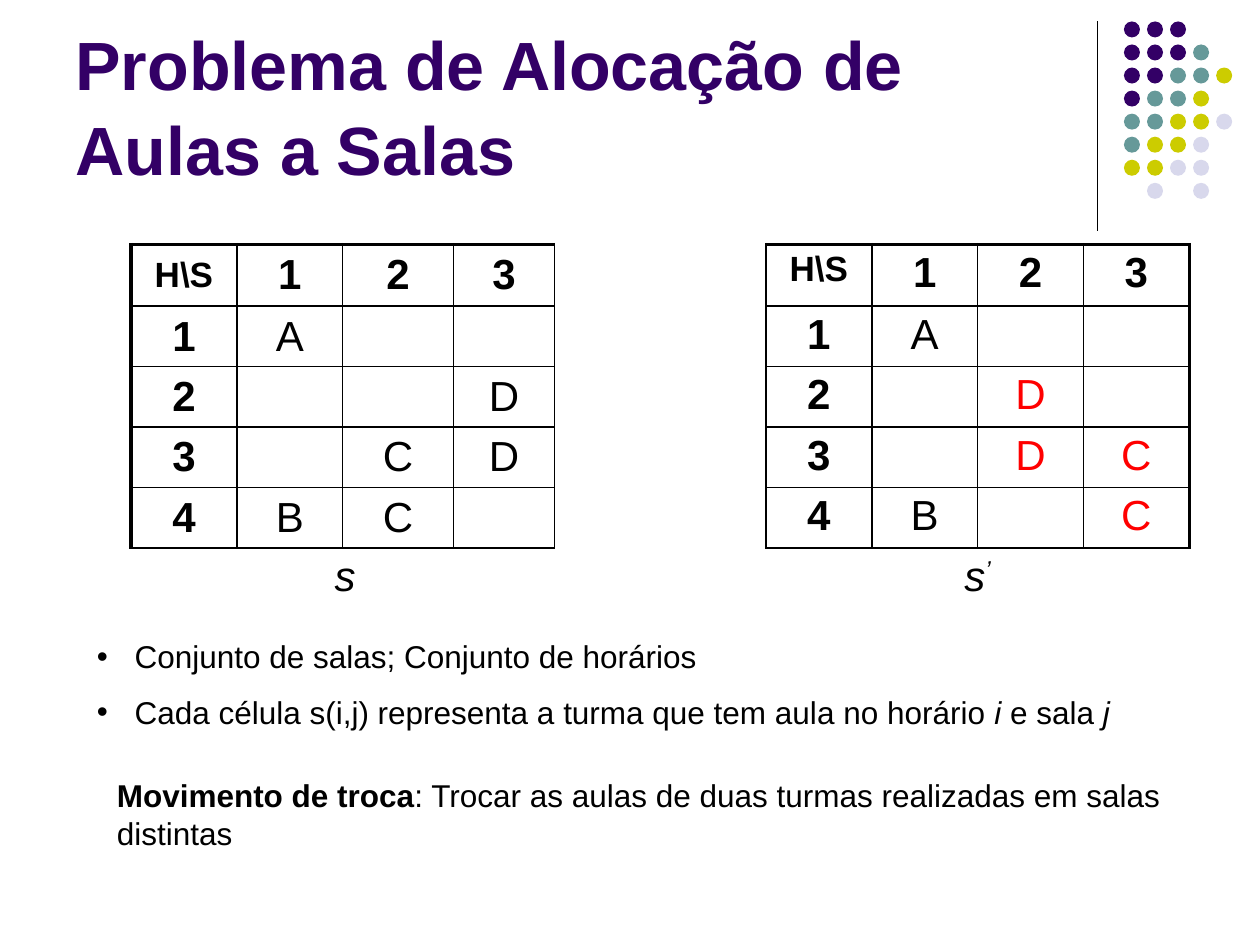
from dataclasses import dataclass
from lxml.etree import SubElement
from pptx import Presentation
from pptx.dml.color import RGBColor
from pptx.enum.shapes import MSO_CONNECTOR, MSO_SHAPE
from pptx.enum.text import MSO_ANCHOR, PP_ALIGN
from pptx.oxml.ns import qn
from pptx.slide import Slide
from pptx.util import Inches, Pt

COLUMNS, ROWS = 100, 75
NO_STYLE = "{2D5ABB26-0587-4C30-8999-92F81FD0307C}"


def color(value):
    return RGBColor.from_string(value)


def units(*lengths):
    return [Inches(length / 10) for length in lengths]


def write(paragraph, text, font="Arial", size=18, ink="000000", bold=False,
          italic=False, raised=0):
    run = paragraph.add_run()
    run.text = text
    run.font.name, run.font.size = font, Pt(size)
    run.font.bold, run.font.italic = bold, italic
    run.font.color.rgb = color(ink)
    if raised:
        run._r.get_or_add_rPr().set("baseline", str(raised * 1000))


@dataclass
class Board:
    slide: Slide
    ink: str = "000000"
    accent: str = "330066"
    moved: str = "FF0000"
    thin: float = 1
    thick: float = 2.25

    def text(self, box, paragraphs, bullet=False, gap=0, anchor=MSO_ANCHOR.TOP,
             spacing=None):
        frame = self.slide.shapes.add_textbox(*units(*box)).text_frame
        frame.word_wrap, frame.vertical_anchor = True, anchor
        for number, runs in enumerate(paragraphs):
            paragraph = frame.add_paragraph() if number else frame.paragraphs[0]
            paragraph.space_before = Pt(gap)
            if spacing:
                paragraph.line_spacing = spacing
            if bullet:
                properties = paragraph._p.get_or_add_pPr()
                indent = Inches(0.3)
                properties.set("marL", str(indent))
                properties.set("indent", str(-indent))
                SubElement(properties, qn("a:buFont"), typeface="Arial")
                SubElement(properties, qn("a:buChar"), char="•")
            for words, style in runs:
                write(paragraph, words, **style)

    def line(self, start, end, width):
        rule = self.slide.shapes.add_connector(
            MSO_CONNECTOR.STRAIGHT, *units(*start, *end))
        rule.line.color.rgb, rule.line.width = color(self.ink), Pt(width)
        SubElement(rule._element.spPr, qn("a:effectLst"))

    def dots(self, left, top, pitch, size, pattern, palette):
        for row, marks in enumerate(pattern):
            for column, mark in enumerate(marks):
                if mark in palette:
                    dot = self.slide.shapes.add_shape(MSO_SHAPE.OVAL, *units(
                        left + column * pitch, top + row * pitch, size, size))
                    dot.shadow.inherit = False
                    dot.fill.solid()
                    dot.fill.fore_color.rgb = color(palette[mark])
                    dot.line.fill.background()

    def table(self, left, top, widths, heights):
        grid = self.slide.shapes.add_table(
            len(heights), len(widths),
            *units(left, top, sum(widths), sum(heights))).table
        grid.first_row = grid.horz_banding = False
        grid._tbl.tblPr.find(qn("a:tableStyleId")).text = NO_STYLE
        for column, width in zip(grid.columns, units(*widths)):
            column.width = width
        for row, height in zip(grid.rows, units(*heights)):
            row.height = height
        for cell in grid.iter_cells():
            cell.margin_top = cell.margin_bottom = Inches(0.04)
            cell.fill.background()
        return grid

    def borders(self, cell, **widths):
        properties = cell._tc.get_or_add_tcPr()
        for position, side in enumerate("LRTB"):
            edge = properties.makeelement(
                qn(f"a:ln{side}"), {"w": str(Pt(widths.get(side, self.thin)))})
            fill = SubElement(edge, qn("a:solidFill"))
            SubElement(fill, qn("a:srgbClr"), val=self.ink)
            properties.insert(position, edge)

    def cell_text(self, cell, text, anchor, **style):
        cell.vertical_anchor = anchor
        paragraph = cell.text_frame.paragraphs[0]
        paragraph.alignment = PP_ALIGN.CENTER
        write(paragraph, text, **style)
        return paragraph

    def schedule(self, grid, first, lessons, anchor, outer, moved=""):
        rooms = ["H\\S", "1", "2", "3"]
        hours = [[str(hour), *row] for hour, row in enumerate(lessons, 1)]
        for row, entries in enumerate([rooms, *hours]):
            for column, entry in enumerate(entries):
                cell = grid.cell(row, first + column)
                heavy = {"T": self.thick} if row == 0 else {}
                if column == (0 if outer == "L" else 3):
                    heavy[outer] = self.thick
                self.borders(cell, **heavy)
                if entry.strip():
                    self.cell_text(
                        cell, entry, anchor, size=20 if entry == "H\\S" else 24,
                        bold=row == 0 or column == 0,
                        ink=self.moved if entry in moved else self.ink)

    def caption(self, grid, first, text):
        name = grid.cell(5, first + 1)
        name.merge(grid.cell(5, first + 2))
        grid.cell(6, first).merge(grid.cell(6, first + 3))
        return self.cell_text(name, text, MSO_ANCHOR.TOP, size=24, italic=True)


def main():
    deck = Presentation()
    deck.slide_width, deck.slide_height = units(COLUMNS, ROWS)
    board = Board(deck.slides.add_slide(deck.slide_layouts[6]))

    board.line((87.1, 1.7), (87.1, 18.3), 0.75)
    board.dots(89.2, 1.7, 1.83, 1.27,
               ["ppp", "pppt", "pptty", "ptty", "ttyyl", "tyyl", "yyll", " l l"],
               {"p": board.accent, "t": "669999", "y": "CCCC00", "l": "D8D8EC"})
    heading = {"size": 39, "ink": board.accent, "bold": True}
    board.text((5, 1.3, 82.5, 14.2),
               [[("Problema de Alocação de Aulas a Salas", heading)]],
               anchor=MSO_ANCHOR.BOTTOM, spacing=1.04)

    grid = board.table(10.4, 19.4, [8.4, 8.4, 8.8, 8] + [8.4] * 6,
                       [4.9] + [4.1] * 6)
    board.schedule(grid, 0, ["A  ", "  D", " CD", "BC "], MSO_ANCHOR.MIDDLE, "L")
    board.schedule(grid, 6, ["A  ", " D ", " DC", "B C"], MSO_ANCHOR.TOP, "R",
                   moved="CD")
    board.caption(grid, 0, "s")
    neighbour = board.caption(grid, 6, "s")
    write(neighbour, "’", size=24, italic=True, raised=30)

    plain, slanted = {}, {"italic": True}
    board.text((8.3, 61.1, 89, 7), [[
        ("Movimento de troca", {"bold": True}),
        (": Trocar as aulas de duas turmas realizadas em salas distintas", plain),
    ]])
    board.text((6.7, 50.1, 89.8, 8.5), [
        [("Conjunto de salas; Conjunto de horários", plain)],
        [("Cada célula s(i,j) representa a turma que tem aula no horário ", plain),
         ("i", slanted), (" e sala ", plain), ("j", slanted)],
    ], bullet=True, gap=10)

    deck.save("out.pptx")


if __name__ == "__main__":
    main()
